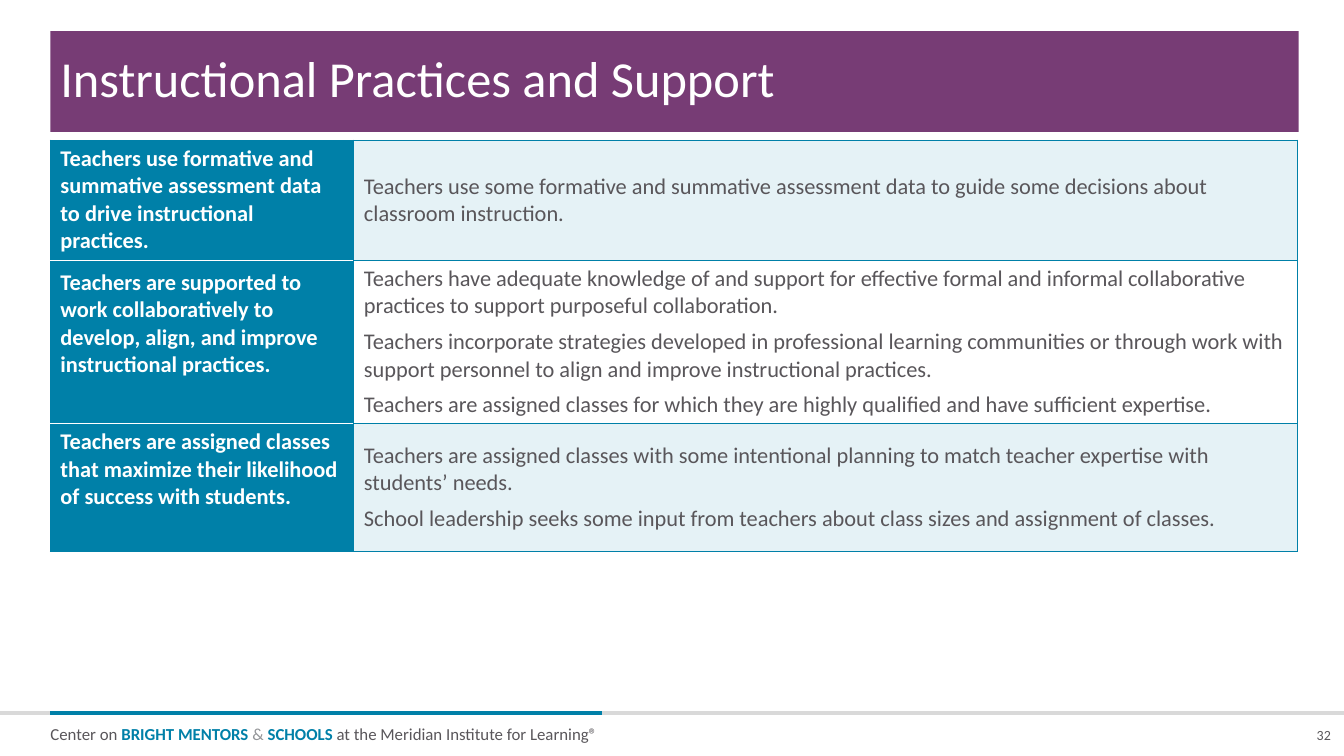
from lxml.etree import SubElement
from pptx import Presentation
from pptx.dml.color import RGBColor
from pptx.enum.shapes import MSO_CONNECTOR, MSO_SHAPE
from pptx.enum.text import MSO_ANCHOR, PP_ALIGN
from pptx.oxml import parse_xml
from pptx.oxml.ns import nsdecls, qn
from pptx.util import Inches, Pt

TEAL = RGBColor(0x00, 0x80, 0xA8)
PALE = RGBColor(0xE5, 0xF2, 0xF6)
PURPLE = RGBColor(0x77, 0x3C, 0x75)
INK = RGBColor(0x59, 0x56, 0x5A)
GRAY = RGBColor(0x93, 0x95, 0x98)
RULE = RGBColor(0xD9, 0xD9, 0xD9)
WHITE = RGBColor(0xFF, 0xFF, 0xFF)
FONT = "Calibri"

TITLE = "Instructional Practices and Support"
PRACTICES = [
    ("Teachers use formative and summative assessment data to drive instructional practices.",
     ["Teachers use some formative and summative assessment data to guide some decisions about "
      "classroom instruction."]),
    ("Teachers are supported to work collaboratively to develop, align, and improve "
     "instructional practices.",
     ["Teachers have adequate knowledge of and support for effective formal and informal "
      "collaborative practices to support purposeful collaboration.",
      "Teachers incorporate strategies developed in professional learning communities or through "
      "work with support personnel to align and improve instructional practices.",
      "Teachers are assigned classes for which they are highly qualified and have sufficient "
      "expertise."]),
    ("Teachers are assigned classes that maximize their likelihood of success with students.",
     ["Teachers are assigned classes with some intentional planning to match teacher expertise "
      "with students’ needs.",
      "School leadership seeks some input from teachers about class sizes and assignment of "
      "classes."]),
]
FOOTER = [
    ("Center on ", INK, False),
    ("BRIGHT MENTORS ", TEAL, True),
    ("& ", GRAY, False),
    ("SCHOOLS", TEAL, True),
    (" at the Meridian Institute for Learning®", INK, False),
]
PAGE = "32"

WIDTH, HEIGHT = 13.33, 7.5
LEFT, RULE_TOP, RULE_END = 0.5, 7.07, 5.97
FOOTER_WIDTH = WIDTH / 2
COLS = [3.01, 9.36]
ROWS = [1.19, 1.62, 1.27]
LABEL_TOPS = [0.05, 0.09, 0.05]


def set_font(target, size, color, bold=False):
    font = target.font
    font.name, font.size, font.bold = FONT, Pt(size), bold
    font.color.rgb = color


def add_text(s, x, y, w, h):
    tf = s.shapes.add_textbox(Inches(x), Inches(y), Inches(w), Inches(h)).text_frame
    tf.margin_left = tf.margin_right = tf.margin_top = tf.margin_bottom = 0
    tf.word_wrap = False
    return tf


def add_rule(s, start, end, color):
    y = Inches(RULE_TOP)
    line = s.shapes.add_connector(MSO_CONNECTOR.STRAIGHT, Inches(start), y, Inches(end), y)
    line.line.color.rgb, line.line.width = color, Pt(3)
    SubElement(line._element.spPr, qn("a:effectLst"))


def set_borders(cell, top, bottom):
    tcPr = cell._tc.get_or_add_tcPr()
    edges = {"lnL": TEAL, "lnR": TEAL, "lnT": top, "lnB": bottom}
    for i, (edge, color) in enumerate(edges.items()):
        tcPr.insert(i, parse_xml(
            f'<a:{edge} {nsdecls("a")} w="{Pt(0.75)}"><a:solidFill>'
            f'<a:srgbClr val="{color}"/></a:solidFill></a:{edge}>'))


def fill_cell(cell, texts, color, fill, bold=False):
    cell.fill.solid()
    cell.fill.fore_color.rgb = fill
    tf = cell.text_frame
    for i, text in enumerate(texts):
        p = tf.add_paragraph() if i else tf.paragraphs[0]
        p.text = text
        p.space_before = Pt(6 if i else 0)
        set_font(p, 16, color, bold)


def add_practices(s):
    frame = s.shapes.add_table(len(ROWS), len(COLS), Inches(LEFT), Inches(1.39),
                               Inches(sum(COLS)), Inches(sum(ROWS)))
    table = frame.table
    table.first_row = table.horz_banding = False
    for col, width in zip(table.columns, COLS):
        col.width = Inches(width)
    last = len(ROWS) - 1
    for i, (label, details) in enumerate(PRACTICES):
        table.rows[i].height = Inches(ROWS[i])
        head, body = table.cell(i, 0), table.cell(i, 1)
        fill_cell(head, [label], WHITE, TEAL, True)
        head.vertical_anchor = MSO_ANCHOR.TOP
        head.margin_top = Inches(LABEL_TOPS[i])
        set_borders(head, WHITE if i else TEAL, WHITE if i < last else TEAL)
        fill_cell(body, details, INK, WHITE if i % 2 else PALE)
        body.vertical_anchor = MSO_ANCHOR.MIDDLE
        set_borders(body, TEAL, TEAL)


def main():
    prs = Presentation()
    prs.slide_width, prs.slide_height = Inches(WIDTH), Inches(HEIGHT)
    s = prs.slides.add_slide(prs.slide_layouts[6])

    add_rule(s, 0, WIDTH, RULE)
    add_rule(s, LEFT, RULE_END, TEAL)
    p = add_text(s, LEFT, 7.13, FOOTER_WIDTH, 0.23).paragraphs[0]
    p.alignment, p.line_spacing = PP_ALIGN.LEFT, 1.25
    for text, color, bold in FOOTER:
        r = p.add_run()
        r.text = text
        set_font(r, 12, color, bold)

    sp = s.shapes.add_shape(MSO_SHAPE.RECTANGLE, Inches(LEFT), Inches(0.31),
                            Inches(12.38), Inches(1))
    sp.shadow.inherit = False
    sp.fill.solid()
    sp.fill.fore_color.rgb = PURPLE
    sp.line.fill.background()
    tf = sp.text_frame
    tf.margin_left, tf.margin_right = Inches(0.1), Inches(0.15)
    tf.margin_top = tf.margin_bottom = Inches(0.04)
    tf.vertical_anchor = MSO_ANCHOR.MIDDLE
    p = tf.paragraphs[0]
    p.text, p.alignment, p.line_spacing = TITLE, PP_ALIGN.LEFT, 0.9
    set_font(p, 36, WHITE)

    add_practices(s)

    tf = add_text(s, 13.03, 7.2, 0.17, 0.17)
    tf.vertical_anchor = MSO_ANCHOR.BOTTOM
    p = tf.paragraphs[0]
    p.text, p.alignment = PAGE, PP_ALIGN.RIGHT
    set_font(p, 10, INK)

    prs.save("out.pptx")


if __name__ == "__main__":
    main()
